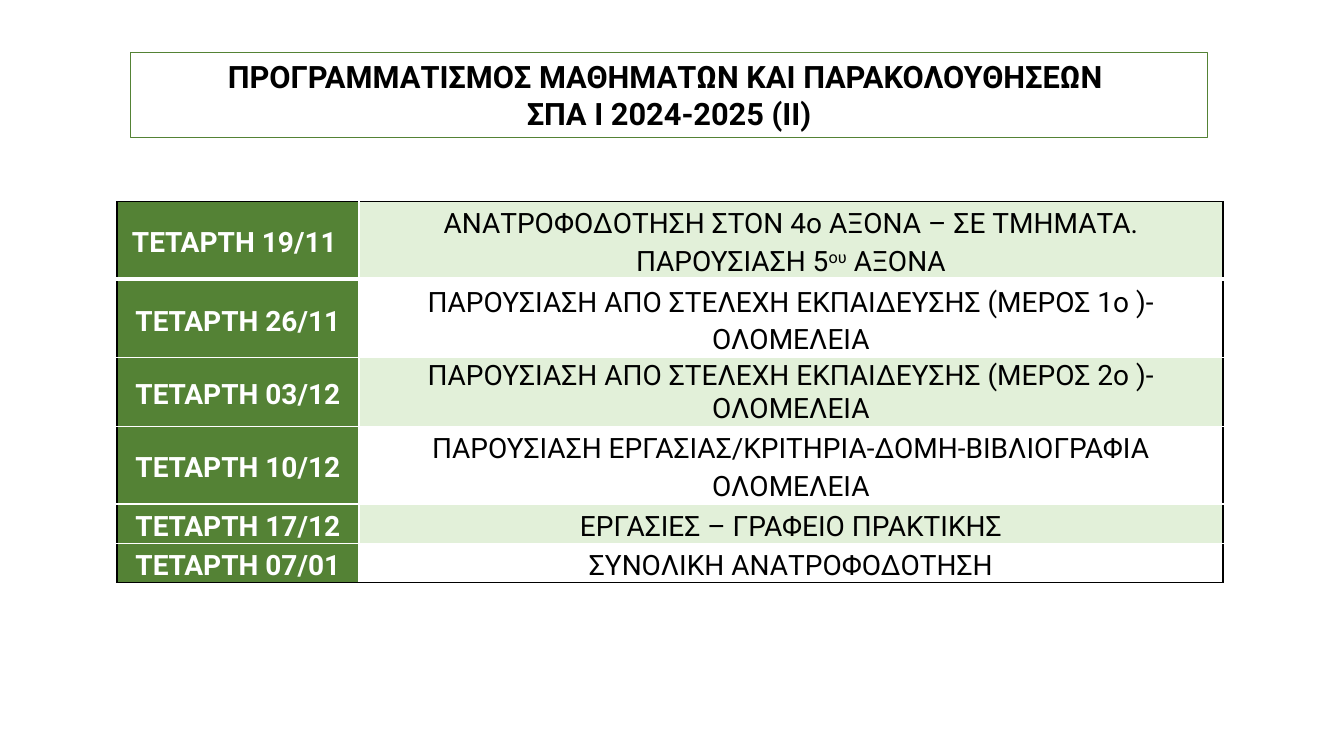
from dataclasses import dataclass

from lxml import etree
from pptx import Presentation
from pptx.dml.color import RGBColor
from pptx.enum.shapes import MSO_SHAPE
from pptx.enum.text import MSO_ANCHOR, PP_ALIGN
from pptx.oxml.ns import qn
from pptx.util import Emu, Pt

RECTANGLE = MSO_SHAPE.RECTANGLE
MIDDLE = MSO_ANCHOR.MIDDLE
CENTER = PP_ALIGN.CENTER
EMU_PER_PX = 9144


@dataclass(frozen=True)
class Theme:
    font: str = "Roboto"
    title_size: int = 22
    table_size: int = 20
    black: str = "000000"
    white: str = "FFFFFF"
    green: str = "548235"
    pale_green: str = "E2F0D9"


THEME = Theme()

TITLE_LINES = [
    "ΠΡΟΓΡΑΜΜΑΤΙΣΜΟΣ ΜΑΘΗΜΑΤΩΝ ΚΑΙ ΠΑΡΑΚΟΛΟΥΘΗΣΕΩΝ ",
    "ΣΠΑ Ι 2024-2025 (ΙΙ)",
]
COLUMN_WIDTHS = [240, 857]
SCHEDULE = [
    (77, 1.15, "ΤΕΤΑΡΤΗ 19/11 ",
     ["ΑΝΑΤΡΟΦΟΔΟΤΗΣΗ ΣΤΟΝ 4ο ΑΞΟΝΑ – ΣΕ ΤΜΗΜΑΤΑ. ΠΑΡΟΥΣΙΑΣΗ 5", "ου", " ΑΞΟΝΑ"]),
    (78, 1.15, "ΤΕΤΑΡΤΗ 26/11",
     ["ΠΑΡΟΥΣΙΑΣΗ ΑΠΟ ΣΤΕΛΕΧΗ ΕΚΠΑΙΔΕΥΣΗΣ (ΜΕΡΟΣ 1ο )-ΟΛΟΜΕΛΕΙΑ"]),
    (68, None, "ΤΕΤΑΡΤΗ 03/12",
     ["ΠΑΡΟΥΣΙΑΣΗ ΑΠΟ ΣΤΕΛΕΧΗ ΕΚΠΑΙΔΕΥΣΗΣ (ΜΕΡΟΣ 2ο )-ΟΛΟΜΕΛΕΙΑ"]),
    (77, 1.15, "ΤΕΤΑΡΤΗ 10/12",
     ["ΠΑΡΟΥΣΙΑΣΗ ΕΡΓΑΣΙΑΣ/ΚΡΙΤΗΡΙΑ-ΔΟΜΗ-ΒΙΒΛΙΟΓΡΑΦΙΑ ΟΛΟΜΕΛΕΙΑ"]),
    (39, 1.15, "ΤΕΤΑΡΤΗ 17/12", ["ΕΡΓΑΣΙΕΣ – ΓΡΑΦΕΙΟ ΠΡΑΚΤΙΚΗΣ"]),
    (39, 1.15, "ΤΕΤΑΡΤΗ 07/01", ["ΣΥΝΟΛΙΚΗ ΑΝΑΤΡΟΦΟΔΟΤΗΣΗ"]),
]


def px(length):
    return Emu(length * EMU_PER_PX)


def rgb(color):
    return RGBColor.from_string(color)


def style_paragraph(paragraph, size, color, bold):
    paragraph.alignment = CENTER
    font = paragraph.font
    font.name = THEME.font
    font.size = Pt(size)
    font.bold = bold
    font.color.rgb = rgb(color)


def add_title(slide):
    banner = slide.shapes.add_shape(RECTANGLE, px(129), px(52), px(1069), px(84))
    banner.shadow.inherit = False
    banner.fill.background()
    banner.line.color.rgb = rgb(THEME.green)
    banner.line.width = Pt(0.75)
    frame = banner.text_frame
    frame.word_wrap = True
    frame.text = "\n".join(TITLE_LINES)
    for paragraph in frame.paragraphs:
        style_paragraph(paragraph, THEME.title_size, THEME.black, True)


def set_border(cell, side, color, points):
    properties = cell._tc.get_or_add_tcPr()
    line = etree.SubElement(properties, qn(f"a:ln{side}"), w=str(Pt(points)))
    fill = etree.SubElement(line, qn("a:solidFill"))
    etree.SubElement(fill, qn("a:srgbClr"), val=color)


def set_borders(cell, row, column):
    last_row = len(SCHEDULE) - 1
    outer_edges = {"L": column == 0, "R": column == 1,
                   "T": row == 0, "B": row == last_row}
    for side, outer in outer_edges.items():
        heavy = row == 0 and side == "B"
        set_border(cell, side, THEME.black if outer else THEME.white, 3 if heavy else 1)


def fill_cell(cell, texts, background, color, bold, spacing):
    cell.fill.solid()
    cell.fill.fore_color.rgb = rgb(background)
    cell.vertical_anchor = MIDDLE
    cell.margin_left = cell.margin_right = px(5)
    cell.margin_top = px(1)
    cell.margin_bottom = 0
    paragraph = cell.text_frame.paragraphs[0]
    if spacing:
        paragraph.line_spacing = spacing
        paragraph.space_after = Pt(10)
    for position, text in enumerate(texts):
        run = paragraph.add_run()
        run.text = text
        if position == 1:
            run._r.get_or_add_rPr().set("baseline", "30000")
    style_paragraph(paragraph, THEME.table_size, color, bold)


def add_schedule(slide):
    heights = [height for height, *_ in SCHEDULE]
    table = slide.shapes.add_table(
        len(SCHEDULE), len(COLUMN_WIDTHS), px(116), px(200),
        px(sum(COLUMN_WIDTHS)), px(sum(heights))).table
    table.first_row = False
    table.horz_banding = False
    for column, width in enumerate(COLUMN_WIDTHS):
        table.columns[column].width = px(width)
    for row, (height, spacing, date, topic) in enumerate(SCHEDULE):
        table.rows[row].height = px(height)
        date_cell, topic_cell = table.cell(row, 0), table.cell(row, 1)
        set_borders(date_cell, row, 0)
        set_borders(topic_cell, row, 1)
        band = THEME.white if row % 2 else THEME.pale_green
        fill_cell(date_cell, [date], THEME.green, THEME.white, True, 1.15)
        fill_cell(topic_cell, topic, band, THEME.black, False, spacing)


def main():
    presentation = Presentation()
    presentation.slide_width = px(1333)
    presentation.slide_height = px(750)
    slide = presentation.slides.add_slide(presentation.slide_layouts[6])
    add_schedule(slide)
    add_title(slide)
    presentation.save("out.pptx")


if __name__ == "__main__":
    main()
